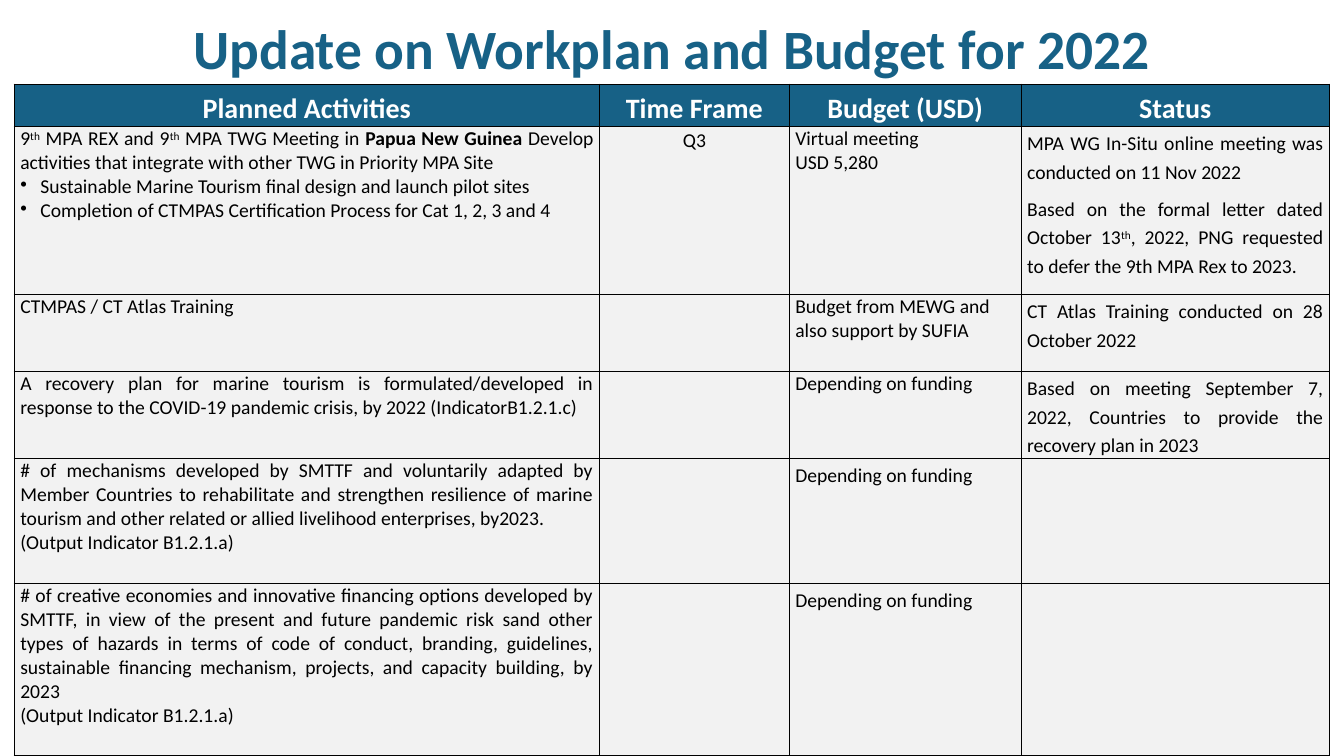
from lxml import etree
from pptx import Presentation
from pptx.dml.color import RGBColor
from pptx.enum.text import MSO_ANCHOR, PP_ALIGN
from pptx.oxml.ns import qn
from pptx.util import Pt

LEFT, CENTER, JUSTIFY = PP_ALIGN.LEFT, PP_ALIGN.CENTER, PP_ALIGN.JUSTIFY
TOP, MIDDLE = MSO_ANCHOR.TOP, MSO_ANCHOR.MIDDLE

# Content: a cell is (paragraph format, paragraphs);
# a paragraph is plain text or a list of (text, span format)
TITLE = "Update on Workplan and Budget for 2022"
HEADERS = ["Planned Activities", "Time Frame", "Budget (USD)", "Status"]
EMPTY = ("plain", [])
FUNDING = "Depending on funding"
ROWS = [
    [("block", [[("9", ""), ("th", "super"), (" MPA REX and 9", ""), ("th", "super"),
                 (" MPA TWG Meeting in ", ""), ("Papua New Guinea ", "bold"),
                 ("Develop activities that integrate with other TWG in Priority MPA Site", "")],
                "• Sustainable Marine Tourism final design and launch pilot sites",
                "• Completion of CTMPAS Certification Process for Cat 1, 2, 3 and 4"]),
     ("centered", ["Q3"]),
     ("plain", ["Virtual meeting", "USD 5,280"]),
     ("spaced", ["MPA WG In-Situ online meeting was conducted on 11 Nov 2022",
                 [("Based on the formal letter dated October 13", ""), ("th", "super"),
                  (", 2022, PNG requested to defer the 9th MPA Rex to 2023.", "")]])],
    [("block", ["CTMPAS / CT Atlas Training"]),
     EMPTY,
     ("plain", ["Budget from MEWG and also support by SUFIA"]),
     ("spaced", ["CT Atlas Training conducted on 28 October 2022"])],
    [("block", ["A recovery plan for marine tourism is formulated/developed in response to "
                "the COVID-19 pandemic crisis, by 2022 (IndicatorB1.2.1.c)"]),
     EMPTY,
     ("plain", [FUNDING]),
     ("spaced", ["Based on meeting September 7, 2022, Countries to provide the recovery "
                 "plan in 2023"])],
    [("block", ["# of mechanisms developed by SMTTF and voluntarily adapted by Member "
                "Countries to rehabilitate and strengthen resilience of marine tourism and "
                "other related or allied livelihood enterprises, by2023.",
                "(Output Indicator B1.2.1.a)"]),
     EMPTY, ("spaced", [FUNDING]), EMPTY],
    [("block", ["# of creative economies and innovative financing options developed by "
                "SMTTF, in view of the present and future pandemic risk sand other types of "
                "hazards in terms of code of conduct, branding, guidelines, sustainable "
                "financing mechanism, projects, and capacity building, by 2023",
                "(Output Indicator B1.2.1.a)"]),
     EMPTY, ("spaced", [FUNDING]), EMPTY],
]

# Formats and measures, in points
COLORS = {"blue": "176186", "white": "FFFFFF", "black": "000000", "gray": "F2F2F2"}
PARA_FORMATS = {
    "title": {"alignment": CENTER, "line_spacing": 1.07},
    "header": {"alignment": CENTER, "line_spacing": 1.2, "space_after": Pt(6)},
    "block": {"alignment": JUSTIFY},
    "centered": {"alignment": CENTER, "line_spacing": 1.07},
    "plain": {"alignment": LEFT},
    "spaced": {"alignment": JUSTIFY, "line_spacing": 1.2, "space_after": Pt(6)},
}
TITLE_FONT = {"name": "Calibri", "size": Pt(39.6), "bold": True}
HEADER_FONT = {"name": "Calibri", "size": Pt(20), "bold": True}
BODY_FONT = {"name": "Calibri", "size": Pt(14), "bold": False}
CELL_FORMAT = {"margin_left": Pt(4.3), "margin_right": Pt(4.3),
               "margin_top": Pt(0.7), "margin_bottom": Pt(0)}
COLUMN_WIDTHS = [418, 135.6, 165.6, 220.2]
ROW_HEIGHTS = [30, 120, 55, 62.1, 89.3, 122.9]
TABLE_LEFT, TABLE_TOP = 10.2, 60.2
BULLET_INDENT = 14.4


def set_all(target, values):
    for name, value in values.items():
        setattr(target, name, value)


def add_bullet(para):
    props = para._p.get_or_add_pPr()
    props.set("marL", str(Pt(BULLET_INDENT)))
    props.set("indent", str(-Pt(BULLET_INDENT)))
    etree.SubElement(props, qn("a:buChar")).set("char", "•")


def write(frame, paragraphs, para_format, font, color):
    for index, content in enumerate(paragraphs):
        para = frame.paragraphs[0] if index == 0 else frame.add_paragraph()
        set_all(para, PARA_FORMATS[para_format])
        spans = [(content, "")] if isinstance(content, str) else content
        if spans[0][0].startswith("• "):
            add_bullet(para)
        for text, kind in spans:
            span = para.add_run()
            span.text = text.removeprefix("• ")
            set_all(span.font, font)
            span.font.color.rgb = RGBColor.from_string(COLORS[color])
            if kind == "bold":
                span.font.bold = True
            elif kind == "super":
                span.font._rPr.set("baseline", "30000")


def add_borders(cell):
    props = cell._tc.get_or_add_tcPr()
    for index, side in enumerate(("lnL", "lnR", "lnT", "lnB")):
        line = etree.Element(qn("a:" + side), w=str(Pt(1)))
        fill = etree.SubElement(line, qn("a:solidFill"))
        etree.SubElement(fill, qn("a:srgbClr")).set("val", COLORS["black"])
        props.insert(index, line)


deck = Presentation()
deck.slide_width, deck.slide_height = Pt(960), Pt(540)
page = deck.slides.add_slide(deck.slide_layouts[6])

# Title
title_box = page.shapes.add_textbox(Pt(66), Pt(10.8), Pt(828), Pt(42.5))
set_all(title_box.text_frame, {"word_wrap": True, "vertical_anchor": MIDDLE})
write(title_box.text_frame, [TITLE], "title", TITLE_FONT, "blue")

# Workplan table
table = page.shapes.add_table(
    len(ROW_HEIGHTS), len(COLUMN_WIDTHS), Pt(TABLE_LEFT), Pt(TABLE_TOP),
    Pt(sum(COLUMN_WIDTHS)), Pt(sum(ROW_HEIGHTS))).table
set_all(table, {"first_row": True, "horz_banding": False})
for column, width in zip(table.columns, COLUMN_WIDTHS):
    column.width = Pt(width)
for row, height in zip(table.rows, ROW_HEIGHTS):
    row.height = Pt(height)

header_row = [("header", [text]) for text in HEADERS]
for row_index, row_content in enumerate([header_row] + ROWS):
    is_header = row_index == 0
    font, color, fill, anchor = (
        (HEADER_FONT, "white", "blue", MIDDLE) if is_header
        else (BODY_FONT, "black", "gray", TOP))
    for column_index, (para_format, paragraphs) in enumerate(row_content):
        cell = table.cell(row_index, column_index)
        set_all(cell, {**CELL_FORMAT, "vertical_anchor": anchor})
        cell.fill.solid()
        cell.fill.fore_color.rgb = RGBColor.from_string(COLORS[fill])
        add_borders(cell)
        write(cell.text_frame, paragraphs, para_format, font, color)

deck.save("out.pptx")
